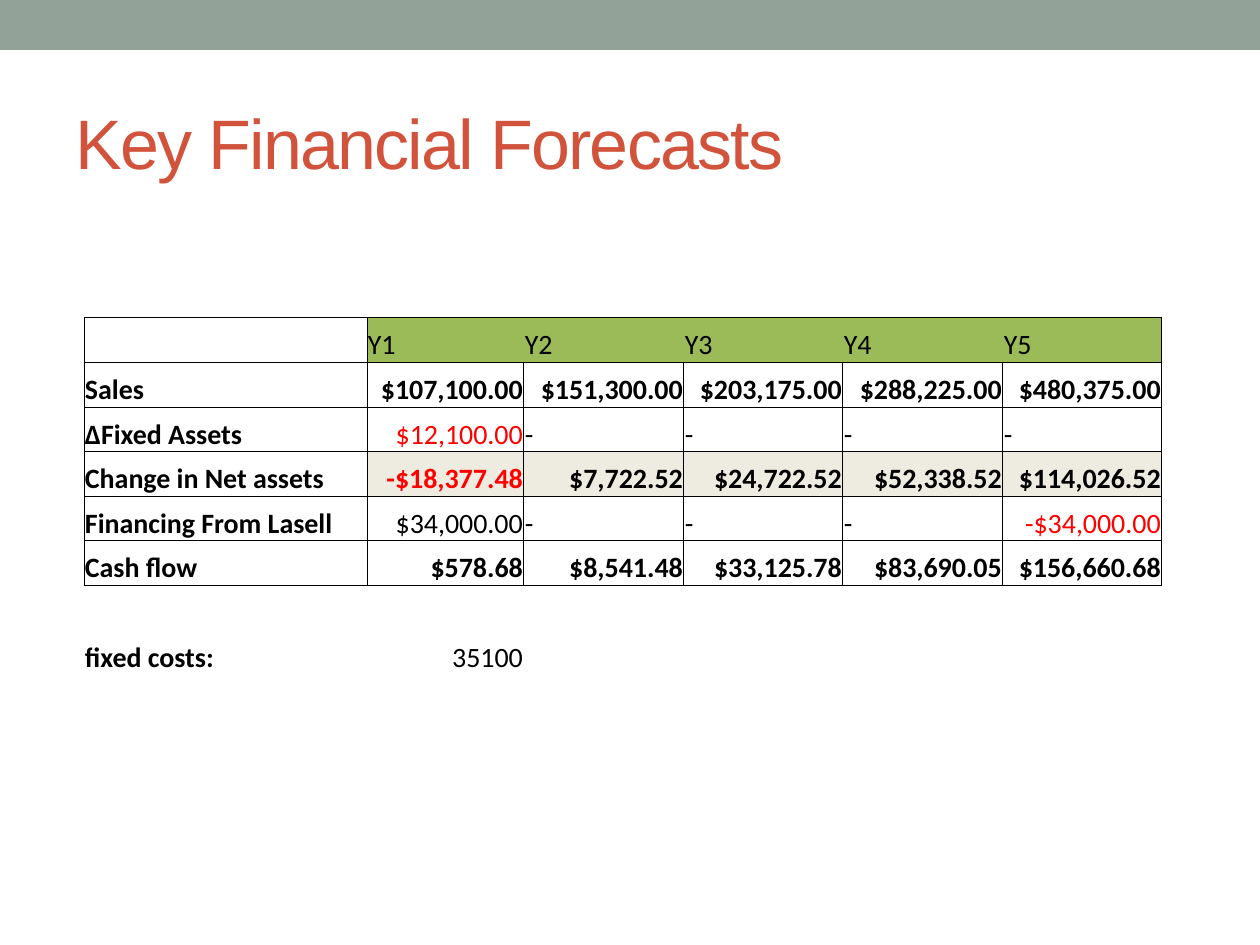
import pptx
import pptx.util
import pptx.dml.color
import pptx.enum.shapes
import pptx.enum.text
import lxml.etree

# Content: empty rows act as spacing above the grid and above the footnote
TITLE = "Key Financial Forecasts"
ROWS = [
    [],
    ["", "Y1", "Y2", "Y3", "Y4", "Y5"],
    ["Sales", "$107,100.00", "$151,300.00", "$203,175.00", "$288,225.00", "$480,375.00"],
    ["ΔFixed Assets", "$12,100.00", "-", "-", "-", "-"],
    ["Change in Net assets", "-$18,377.48", "$7,722.52", "$24,722.52", "$52,338.52", "$114,026.52"],
    ["Financing From Lasell", "$34,000.00", "-", "-", "-", "-$34,000.00"],
    ["Cash flow", "$578.68", "$8,541.48", "$33,125.78", "$83,690.05", "$156,660.68"],
    [],
    ["fixed costs:", "35100"],
]
COLS = [283, 157, 160, 159, 160, 159]
HEAD, LAST = 1, 6
BOLD = {2, 4, 6}
RED = {(3, 1), (4, 1), (5, 5)}
TINT = {1: "9BBB59", 4: "EEECE1"}
LEFT, TOP, HIGH = 84, 273, 402
PLAIN = "{2D5ABB26-0587-4C30-8999-92F81FD0307C}"

ALIGN = pptx.enum.text.PP_ALIGN
ANCHOR = pptx.enum.text.MSO_ANCHOR


def px(num):
    return pptx.util.Emu(round(num * 914400 / 126))


def color(code):
    return pptx.dml.color.RGBColor.from_string(code)


def write(frame, text, size=16, font="Calibri", ink="000000", bold=False,
          align=ALIGN.LEFT, space=None):
    para = frame.paragraphs[0]
    para.alignment = align
    para.font.size = pptx.util.Pt(size)
    if not text:
        return
    run = para.add_run()
    run.text = text
    run.font.size = pptx.util.Pt(size)
    run.font.name = font
    run.font.bold = bold
    run.font.color.rgb = color(ink)
    if space is not None:
        run._r.get_or_add_rPr().set("spc", str(space))


def edge(cell, sides):
    """Draw thin black borders on the named sides and none on the rest."""
    props = cell._tc.get_or_add_tcPr()
    space = pptx.oxml.ns.qn
    for side in "LRTB":
        line = lxml.etree.SubElement(props, space("a:ln" + side), w="6350")
        if side in sides:
            fill = lxml.etree.SubElement(line, space("a:solidFill"))
            lxml.etree.SubElement(fill, space("a:srgbClr"), val="000000")
        else:
            lxml.etree.SubElement(line, space("a:noFill"))


def sides(row, col):
    if row == HEAD:
        return "TB" + ("LR" if col == 0 else "L" if col == 1 else "R" if col == 5 else "")
    if HEAD < row <= LAST:
        return "LRTB"
    return {HEAD - 1: "B", LAST + 1: "T"}.get(row, "")


deck = pptx.Presentation()
deck.slide_width, deck.slide_height = px(1260), px(945)
slide = deck.slides.add_slide(deck.slide_layouts[6])

# Top band
band = slide.shapes.add_shape(pptx.enum.shapes.MSO_SHAPE.RECTANGLE,
                              0, 0, px(1260), px(50))
band.shadow.inherit = False
band.fill.solid()
band.fill.fore_color.rgb = color("93A299")
band.line.fill.background()

# Title
frame = slide.shapes.add_textbox(px(63), px(73), px(1134), px(136)).text_frame
frame.word_wrap = True
frame.vertical_anchor = ANCHOR.MIDDLE
write(frame, TITLE, size=40, font="Arial", ink="D2533C", space=-100)

# Forecast table
shape = slide.shapes.add_table(len(ROWS), len(COLS), px(LEFT), px(TOP),
                               px(sum(COLS)), px(HIGH))
table = shape.table
table.first_row = table.horz_banding = False
table._tbl.tblPr.find(pptx.oxml.ns.qn("a:tableStyleId")).text = PLAIN
for col, wide in enumerate(COLS):
    table.columns[col].width = px(wide)

for row, texts in enumerate(ROWS):
    table.rows[row].height = px(HIGH / len(ROWS))
    for col in range(len(COLS)):
        text = texts[col] if col < len(texts) else ""
        cell = table.cell(row, col)
        cell.margin_left = cell.margin_right = cell.margin_top = px(1)
        cell.margin_bottom = 0
        cell.vertical_anchor = ANCHOR.BOTTOM
        edge(cell, sides(row, col))
        if row in TINT and col > 0:
            cell.fill.solid()
            cell.fill.fore_color.rgb = color(TINT[row])
        else:
            cell.fill.background()
        value = col > 0 and row != HEAD and text != "-"
        write(cell.text_frame, text,
              ink="FF0000" if (row, col) in RED else "000000",
              bold=col == 0 or row in BOLD,
              align=ALIGN.RIGHT if value else ALIGN.LEFT)

deck.save("out.pptx")
